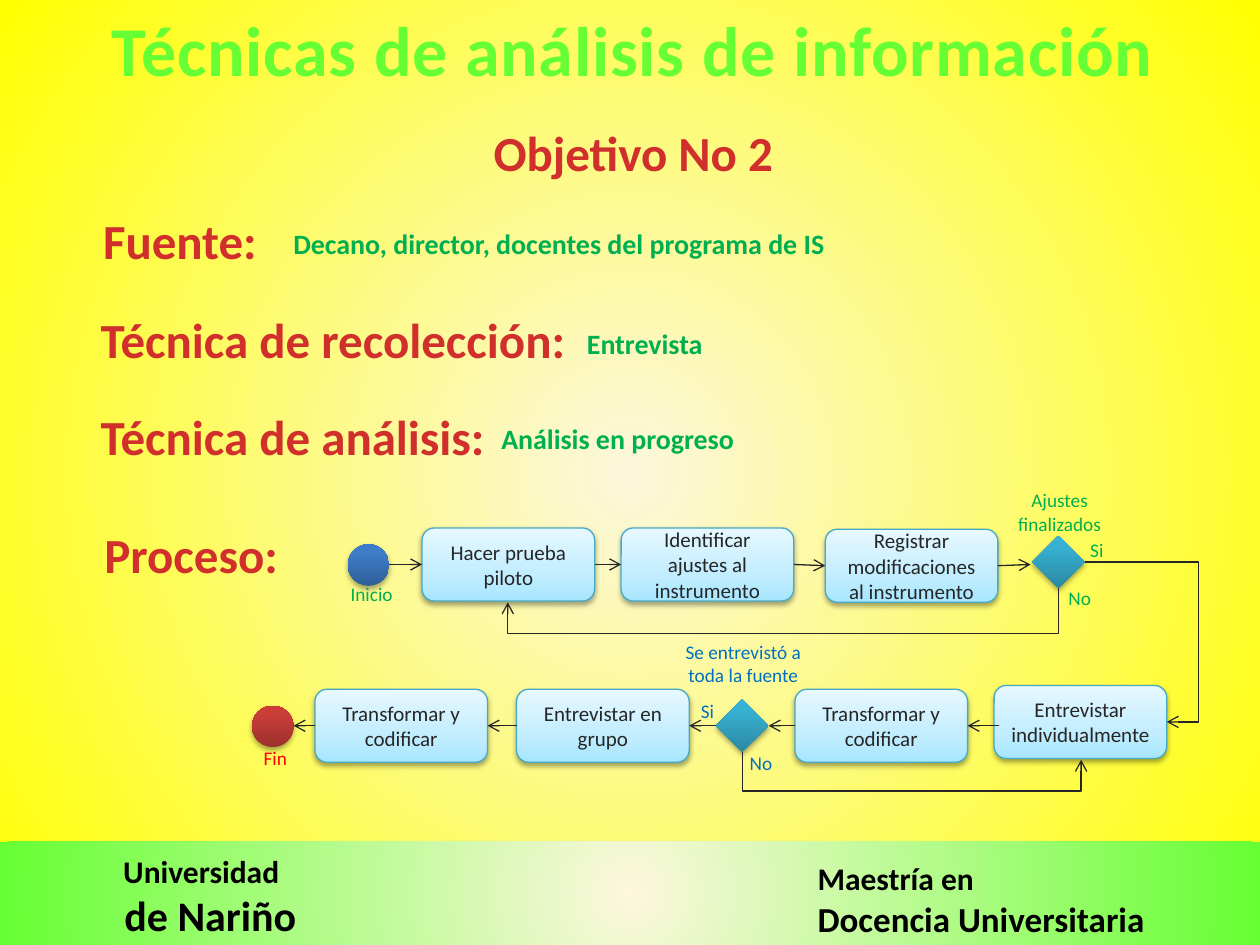
"""Build a slide on interview analysis with a two-row process flow."""
from dataclasses import dataclass
from math import copysign
from typing import Optional

from lxml import etree
from pptx import Presentation
from pptx.dml.color import RGBColor
from pptx.enum.shapes import MSO_CONNECTOR, MSO_SHAPE
from pptx.enum.text import MSO_ANCHOR, MSO_AUTO_SIZE, PP_ALIGN
from pptx.oxml.ns import qn
from pptx.util import Inches, Pt

LEFT, CENTER, RIGHT = PP_ALIGN.LEFT, PP_ALIGN.CENTER, PP_ALIGN.RIGHT
MIDDLE, TOP = MSO_ANCHOR.MIDDLE, MSO_ANCHOR.TOP
GROW = MSO_AUTO_SIZE.SHAPE_TO_FIT_TEXT
STRAIGHT, ELBOW = MSO_CONNECTOR.STRAIGHT, MSO_CONNECTOR.ELBOW
RECTANGLE, ROUNDED = MSO_SHAPE.RECTANGLE, MSO_SHAPE.ROUNDED_RECTANGLE
OVAL, DIAMOND = MSO_SHAPE.OVAL, MSO_SHAPE.DIAMOND
LEFT_SIDE, RIGHT_SIDE = 1, 3


@dataclass(frozen=True)
class Theme:
    font: str = "Calibri"
    lime: str = "66FF33"
    green: str = "00B050"
    blue: str = "0070C0"
    red: str = "FF0000"
    black: str = "000000"
    ink: str = "262626"
    border: str = "46AAC5"
    page: tuple = ((0, "FCF7DD"), (100, "FFFF00"))
    band: tuple = ((0, "FCF7DD"), (100, "66FF33"))
    heading: tuple = ((0, "FC7C7A"), (75, "D02F2C"), (100, "C70500"))
    step: tuple = ((0, "A7E6FF"), (35, "C1EDFF"), (100, "E7F8FF"))
    start: tuple = ((0, "2F5F99"), (80, "3D7CC7"), (100, "3A7CCB"))
    finish: tuple = ((0, "9C2F2D"), (80, "CB3E3A"), (100, "CE3B37"))
    decision: tuple = ((0, "2A88A2"), (80, "37B1D2"), (100, "34B4D6"))
    title_size: int = 40
    heading_size: int = 28
    answer_size: int = 16
    step_size: int = 12
    label_size: int = 11
    line_width: float = 0.75


THEME = Theme()


@dataclass(frozen=True)
class Line:
    text: str
    size: int
    color: object
    bold: bool = False
    align: PP_ALIGN = LEFT


@dataclass(frozen=True)
class Label:
    left: float
    top: float
    width: float
    height: float
    lines: tuple
    wrap: bool = False


@dataclass(frozen=True)
class Node:
    name: str
    kind: MSO_SHAPE
    left: float
    top: float
    fill: tuple
    width: float
    height: float
    text: str = ""


@dataclass(frozen=True)
class Arrow:
    begin: tuple
    end: tuple
    source: Optional[str] = None
    target: Optional[str] = None


def paint(fill, owner, stops: tuple, angle: Optional[int] = None) -> None:
    """Give a fill a linear gradient, or a circular one without an angle."""
    fill.gradient()
    gradient = owner.find(qn("a:gradFill"))
    for child in list(gradient):
        gradient.remove(child)
    stop_list = etree.SubElement(gradient, qn("a:gsLst"))
    for position, color in stops:
        stop = etree.SubElement(stop_list, qn("a:gs"), pos=str(position * 1000))
        etree.SubElement(stop, qn("a:srgbClr"), val=color)
    if angle is None:
        circle = etree.SubElement(gradient, qn("a:path"))
        circle.set("path", "circle")
        sides = {side: "50000" for side in "ltrb"}
        etree.SubElement(circle, qn("a:fillToRect"), **sides)
    else:
        etree.SubElement(gradient, qn("a:lin"), ang=str(angle * 60000), scaled="0")


def write(frame, lines: tuple, wrap: bool, anchor: MSO_ANCHOR = TOP) -> None:
    """Fill a text frame with one paragraph per line."""
    frame.word_wrap = wrap
    frame.vertical_anchor = anchor
    for index, line in enumerate(lines):
        para = frame.add_paragraph() if index else frame.paragraphs[0]
        para.alignment = line.align
        span = para.add_run()
        span.text = line.text
        span.font.name, span.font.size = THEME.font, Pt(line.size)
        span.font.bold = line.bold
        if isinstance(line.color, str):
            span.font.color.rgb = RGBColor.from_string(line.color)
        else:
            paint(span.font.fill, span.font._element, line.color, 90)


def add_label(page, label: Label) -> None:
    """Add a text box."""
    box = page.shapes.add_textbox(*map(Inches, (label.left, label.top, label.width, label.height)))
    write(box.text_frame, label.lines, label.wrap)
    box.text_frame.auto_size = GROW


def add_node(page, node: Node):
    """Add a shaded shape with its centred text."""
    shape = page.shapes.add_shape(
        node.kind, *map(Inches, (node.left, node.top, node.width, node.height)))
    paint(shape.fill, shape._element.spPr, node.fill, None if node.kind == RECTANGLE else 270)
    if node.kind == ROUNDED:
        shape.line.color.rgb = RGBColor.from_string(THEME.border)
        shape.line.width = Pt(THEME.line_width)
    else:
        shape.line.fill.background()
    shape.shadow.inherit = False
    effects = shape._element.spPr.find(qn("a:effectLst"))
    shadow = etree.SubElement(effects, qn("a:outerShdw"), blurRad=str(Pt(3.1)),
                              dist=str(Pt(1.8)), dir="5400000", rotWithShape="0")
    color = etree.SubElement(shadow, qn("a:srgbClr"), val=THEME.black)
    etree.SubElement(color, qn("a:alpha"), val="35000")
    if node.text:
        lines = tuple(Line(text, THEME.step_size, THEME.ink, align=CENTER)
                      for text in node.text.split("\n"))
        write(shape.text_frame, lines, True, MIDDLE)
    return shape


def add_line(page, kind: MSO_CONNECTOR, begin: tuple, end: tuple):
    """Add a thin connector with an open arrowhead at its end."""
    line = page.shapes.add_connector(kind, *map(Inches, begin + end))
    line.line.color.rgb = RGBColor.from_string(THEME.ink)
    line.line.width = Pt(THEME.line_width)
    etree.SubElement(line.line._get_or_add_ln(), qn("a:tailEnd"), type="arrow")
    etree.SubElement(line._element.spPr, qn("a:effectLst"))
    return line


def add_arrow(page, arrow: Arrow, shapes: dict) -> None:
    """Add a straight arrow joined to the shapes it names."""
    line = add_line(page, STRAIGHT, arrow.begin, arrow.end)
    forward = arrow.end[0] > arrow.begin[0]
    if arrow.source:
        line.begin_connect(shapes[arrow.source], RIGHT_SIDE if forward else LEFT_SIDE)
    if arrow.target:
        line.end_connect(shapes[arrow.target], LEFT_SIDE if forward else RIGHT_SIDE)


def add_elbow(page, begin: tuple, end: tuple, bend: float, below: bool) -> None:
    """Add a bent arrow whose middle leg lies at the bend coordinate."""
    axis = 1 if below else 0
    ratio = (bend - begin[axis]) / (end[axis] - begin[axis])
    across, down = end[0] - begin[0], end[1] - begin[1]
    if below:
        middle_x, middle_y = (begin[0] + end[0]) / 2, (begin[1] + end[1]) / 2
        half_width, half_height = copysign(down / 2, across), abs(across) / 2
        begin = (middle_x + half_width, middle_y - half_height)
        end = (middle_x - half_width, middle_y + half_height)
    line = add_line(page, ELBOW, begin, end)
    properties = line._element.spPr
    if below:
        properties.find(qn("a:xfrm")).set("rot", str((270 if across > 0 else 90) * 60000))
    guides = properties.find(qn("a:prstGeom")).get_or_add_avLst()
    etree.SubElement(guides, qn("a:gd"), name="adj1", fmla=f"val {round(ratio * 100000)}")


def heading(left: float, top: float, width: float, text: str, align: PP_ALIGN = LEFT) -> Label:
    """Describe a red heading."""
    line = Line(text, THEME.heading_size, THEME.heading, True, align)
    return Label(left, top, width, 0.57, (line,))


def answer(left: float, top: float, width: float, text: str) -> Label:
    """Describe the green answer beside a heading."""
    return Label(left, top, width, 0.37, (Line(text, THEME.answer_size, THEME.green, True),), True)


def caption(left: float, top: float, width: float, color: str, *texts: str) -> Label:
    """Describe a small centred caption of the flow."""
    lines = tuple(Line(text, THEME.label_size, color, align=CENTER) for text in texts)
    return Label(left, top, width, 0.11 + 0.18 * len(texts), lines)


def step(name: str, left: float, top: float, text: str) -> Node:
    """Describe a process step."""
    return Node(name, ROUNDED, left, top, THEME.step, 1.37, 0.58, text)


BAND = Node("band", RECTANGLE, 0, 6.68, THEME.band, 10, 0.82)
NODES = (
    Node("start", OVAL, 2.76, 4.32, THEME.start, 0.33, 0.33),
    step("pilot", 3.35, 4.19, "Hacer prueba\npiloto"),
    step("identify", 4.93, 4.19, "Identificar ajustes al\ninstrumento"),
    step("record", 6.55, 4.2, "Registrar modificaciones al instrumento"),
    Node("adjusted", DIAMOND, 8.19, 4.25, THEME.decision, 0.42, 0.42),
    step("individual", 7.89, 5.44, "Entrevistar individualmente"),
    step("code", 6.31, 5.47, "Transformar y codificar"),
    Node("covered", DIAMOND, 5.68, 5.55, THEME.decision, 0.42, 0.42),
    step("group", 4.1, 5.47, "Entrevistar en grupo"),
    step("recode", 2.5, 5.47, "Transformar y codificar"),
    Node("finish", OVAL, 2, 5.6, THEME.finish, 0.33, 0.33),
)
ARROWS = (
    Arrow((3.09, 4.48), (3.35, 4.48), None, "pilot"),
    Arrow((4.72, 4.48), (4.93, 4.48), "pilot", "identify"),
    Arrow((6.3, 4.48), (6.55, 4.49), "identify", "record"),
    Arrow((7.92, 4.49), (8.18, 4.48), "record"),
    Arrow((7.93, 5.76), (7.68, 5.76), None, "code"),
    Arrow((6.31, 5.76), (6.1, 5.76), "code", "covered"),
    Arrow((5.68, 5.76), (5.47, 5.76), "covered", "group"),
    Arrow((4.1, 5.76), (3.87, 5.76), "group", "recode"),
    Arrow((2.5, 5.76), (2.33, 5.76), "recode"),
)
ELBOWS = (
    ((8.4, 4.67), (4.03, 4.78), 5.03, True),
    ((8.61, 4.46), (9.26, 5.73), 9.51, False),
    ((5.89, 5.97), (8.58, 6.03), 6.28, True),
)
LABELS = (
    Label(0.88, 6.71, 1.57, 0.81, (Line("Universidad", 18, THEME.black, True),
                                   Line("de Nariño", 24, THEME.black, True, RIGHT)), True),
    Label(6.39, 6.77, 2.91, 0.74, (Line("Maestría en", 18, THEME.black, True),
                                   Line("Docencia Universitaria", 20, THEME.black, True)), True),
    heading(3.8, 0.92, 2.45, "Objetivo No 2", CENTER),
    heading(0.72, 1.62, 1.53, "Fuente:"),
    heading(0.7, 2.41, 4.11, "Técnica de recolección:"),
    heading(0.7, 3.18, 3.55, "Técnica de análisis:"),
    heading(0.73, 4.11, 1.59, "Proceso:"),
    answer(2.23, 1.75, 7.56, "Decano, director, docentes del programa de IS"),
    answer(4.56, 2.54, 4.88, "Entrevista"),
    answer(3.88, 3.3, 4.88, "Análisis en progreso"),
    caption(2.68, 4.57, 0.54, THEME.green, "Inicio"),
    caption(7.98, 3.83, 0.86, THEME.green, "Ajustes", "finalizados"),
    caption(8.55, 4.22, 0.31, THEME.green, "Si"),
    caption(8.38, 4.6, 0.38, THEME.green, "No"),
    caption(5.32, 5.03, 1.16, THEME.blue, "Se entrevistó a", "toda la fuente"),
    caption(5.46, 5.5, 0.31, THEME.blue, "Si"),
    caption(5.85, 5.91, 0.38, THEME.blue, "No"),
    caption(1.99, 5.87, 0.39, THEME.red, "Fin"),
)


def main() -> None:
    """Build and save the deck."""
    deck = Presentation()
    deck.slide_width, deck.slide_height = Inches(10), Inches(7.5)
    page = deck.slides.add_slide(deck.slide_layouts[5])
    fill = page.background.fill
    paint(fill, page._element.find(".//" + qn("p:bgPr")), THEME.page)
    title = page.shapes.title
    title.left, title.top, title.width, title.height = map(Inches, (0.67, 0, 8.71, 0.77))
    title_line = Line("Técnicas de análisis de información", THEME.title_size, THEME.lime, True, CENTER)
    write(title.text_frame, (title_line,), False)
    title.text_frame.auto_size = GROW
    title.text_frame.paragraphs[0].runs[0].font._element.set("spc", "50")
    add_node(page, BAND)
    shapes = {node.name: add_node(page, node) for node in NODES}
    for arrow in ARROWS:
        add_arrow(page, arrow, shapes)
    for elbow in ELBOWS:
        add_elbow(page, *elbow)
    for label in LABELS:
        add_label(page, label)
    deck.save("out.pptx")


if __name__ == "__main__":
    main()
